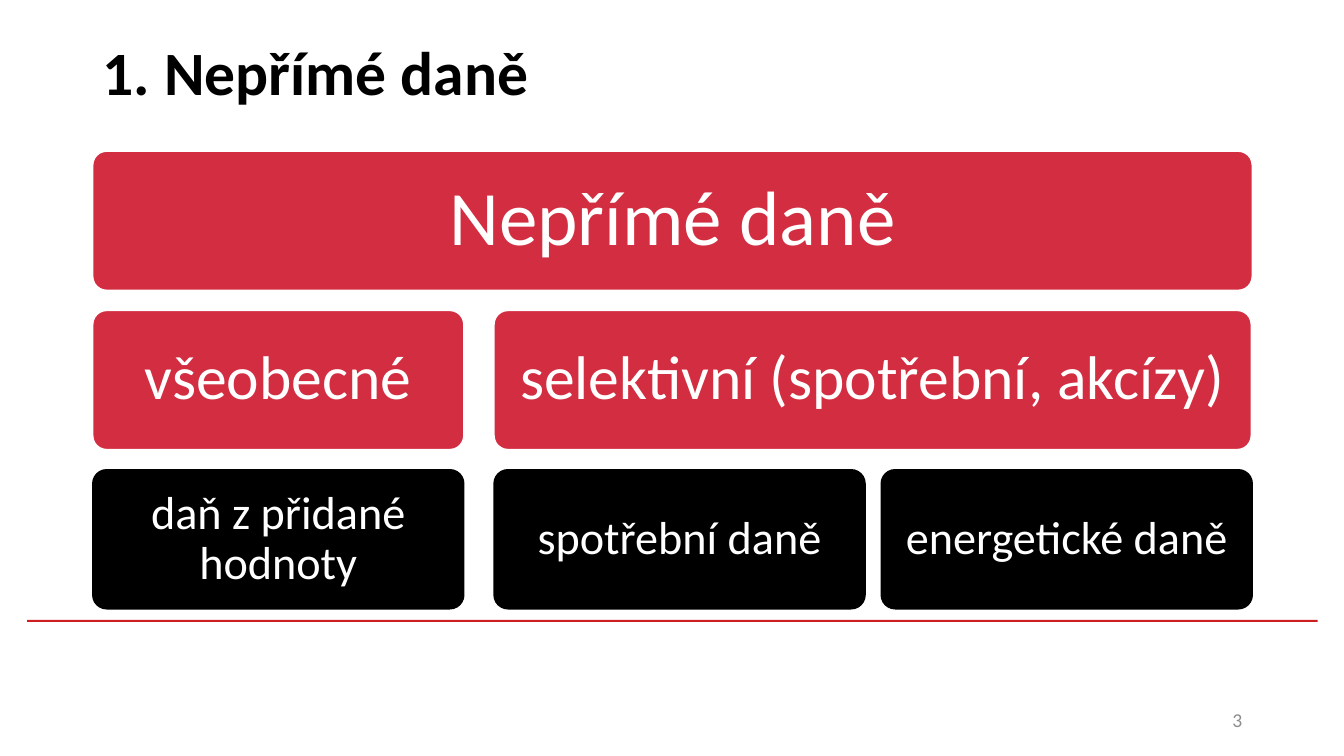
import pptx
import pptx.util
import pptx.dml.color
import pptx.enum.shapes
import pptx.enum.text

RGB = pptx.dml.color.RGBColor
SHAPE = pptx.enum.shapes.MSO_SHAPE
ALIGN = pptx.enum.text.PP_ALIGN
RED = RGB(0xD2, 0x2D, 0x40)
RULE = RGB(0xCD, 0x1F, 0x21)
BLACK = RGB(0, 0, 0)
WHITE = RGB(255, 255, 255)
GRAY = RGB(0x8C, 0x8C, 0x8C)
PX = 9144
LEFT, MID, LAST = 92, 490, 874
NARROW, WIDE, FULL = 368, 751, 1150
TOP, STEP, HIGH = 150, 158, 138


def px(*sizes):
    """Turn px lengths into EMU."""
    return [size * PX for size in sizes]


def write(shape, text, size, color, align, bold=False):
    """Put one styled paragraph, centred vertically, into a shape."""
    frame = shape.text_frame
    frame.word_wrap = True
    frame.vertical_anchor = pptx.enum.text.MSO_ANCHOR.MIDDLE
    frame.text = text
    para = frame.paragraphs[0]
    para.alignment = align
    para.line_spacing = 0.9
    font = para.font
    font.name = "Calibri"
    font.size = pptx.util.Pt(size)
    font.bold = bold
    font.color.rgb = color


def label(slide, area, *style, **extra):
    """Add a text box."""
    write(slide.shapes.add_textbox(*px(*area)), *style, **extra)


def rule(slide, area):
    """Add the thin red bar."""
    bar = slide.shapes.add_shape(SHAPE.RECTANGLE, *px(*area))
    bar.shadow.inherit = False
    bar.fill.solid()
    bar.fill.fore_color.rgb = RULE
    bar.line.fill.background()


def card(slide, row, left, width, text):
    """Add a rounded box styled by its row in the tree."""
    size, inset, fill, edge = (
        (55, 23, RED, WHITE),
        (44, 18, RED, WHITE),
        (33, 14, BLACK, BLACK),
    )[row]
    area = px(left, TOP + row * STEP, width, HIGH)
    box = slide.shapes.add_shape(SHAPE.ROUNDED_RECTANGLE, *area)
    box.adjustments[0] = 0.1
    box.shadow.inherit = False
    box.fill.solid()
    box.fill.fore_color.rgb = fill
    box.line.color.rgb = edge
    box.line.width = pptx.util.Pt(1)
    frame = box.text_frame
    frame.margin_left = frame.margin_right = inset * PX
    frame.margin_top = frame.margin_bottom = inset * PX
    write(box, text, size, WHITE, ALIGN.CENTER)


def main():
    """Build the slide and save it."""
    deck = pptx.Presentation()
    deck.slide_width, deck.slide_height = px(1333, 750)
    slide = deck.slides.add_slide(deck.slide_layouts[6])
    rule(slide, (27, 615, 1280, 2))
    label(slide, (92, 2, 1150, 145), "1. Nepřímé daně", 44, BLACK,
          ALIGN.LEFT, bold=True)
    label(slide, (942, 695, 300, 40), "3", 14, GRAY, ALIGN.RIGHT)
    for item in (
        (0, LEFT, FULL, "Nepřímé daně"),
        (1, LEFT, NARROW, "všeobecné"),
        (2, LEFT, NARROW, "daň z přidané hodnoty"),
        (1, MID, WIDE, "selektivní (spotřební, akcízy)"),
        (2, MID, NARROW, "spotřební daně"),
        (2, LAST, NARROW, "energetické daně"),
    ):
        card(slide, *item)
    deck.save("out.pptx")


if __name__ == "__main__":
    main()
